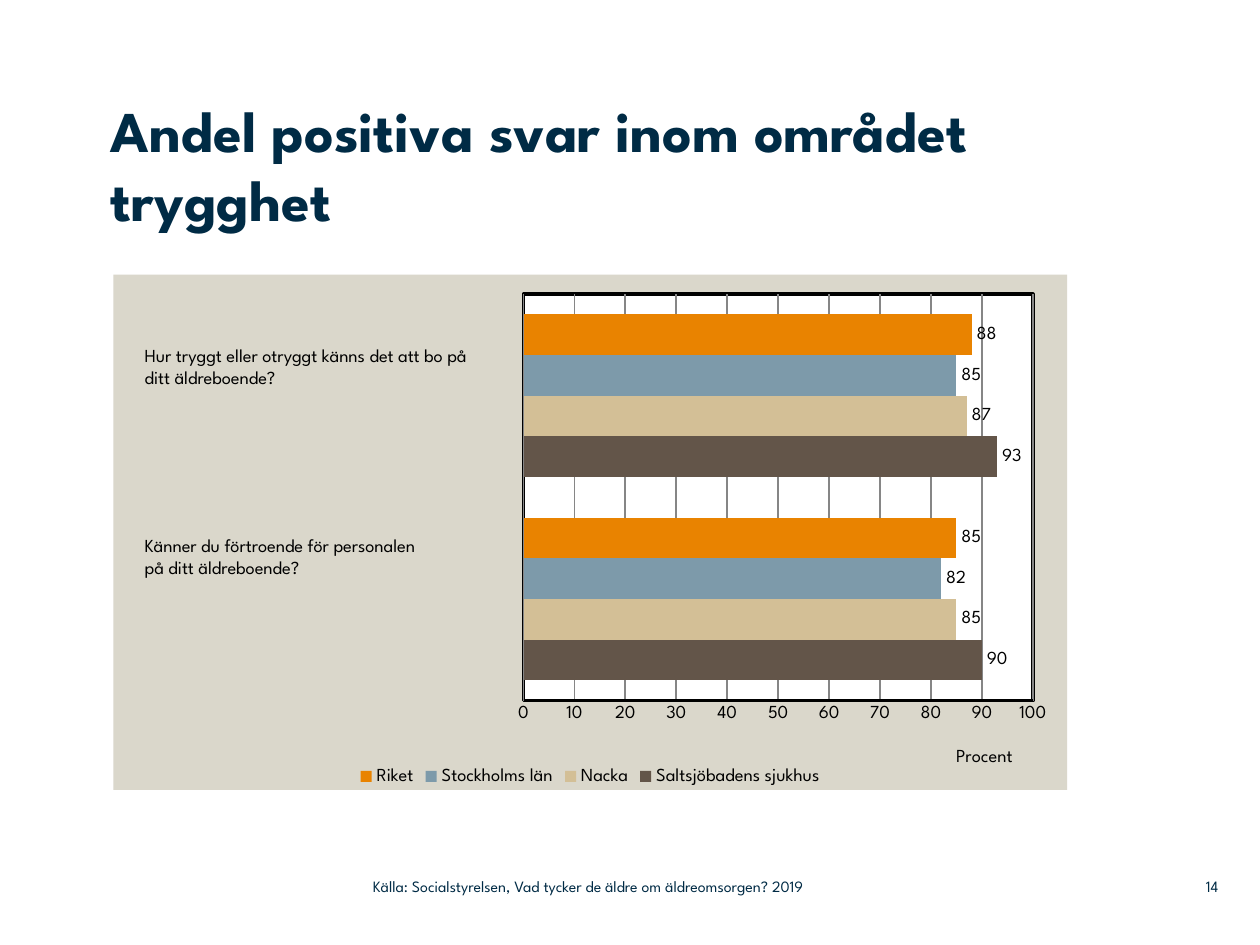
from dataclasses import dataclass

from pptx import Presentation
from pptx.chart.data import CategoryChartData
from pptx.dml.color import RGBColor
from pptx.enum.chart import XL_CHART_TYPE, XL_LABEL_POSITION, XL_LEGEND_POSITION, XL_TICK_MARK
from pptx.enum.text import MSO_ANCHOR, PP_ALIGN
from pptx.oxml import parse_xml
from pptx.oxml.ns import nsdecls, qn
from pptx.util import Inches, Pt


@dataclass(frozen=True)
class Theme:
    font: str = "League Spartan"
    navy: str = "002B45"
    black: str = "000000"
    grid: str = "868686"
    panel: str = "DAD7CB"
    plot: str = "FFFFFF"
    title: float = 33
    body: float = 10.5
    small: float = 9


THEME = Theme()
CATEGORIES = ["1", "2"]
SERIES = [
    ("Saltsjöbadens sjukhus", (90, 93), "635549"),
    ("Nacka", (85, 87), "D3BF96"),
    ("Stockholms län", (82, 85), "7D9AAA"),
    ("Riket", (85, 88), "E98300"),
]


def apply(obj, values):
    for name, value in values.items():
        setattr(obj, name, value)


def set_font(font, size, color, bold=False):
    apply(font, {"name": THEME.font, "size": Pt(size), "bold": bold})
    font.color.rgb = RGBColor.from_string(color)


def fill_text(sp, box, lines, size, color, bold=False, inset=True,
              anchor=MSO_ANCHOR.TOP, align=PP_ALIGN.LEFT):
    apply(sp, dict(zip(("left", "top", "width", "height"), map(Inches, box))))
    tf = sp.text_frame
    apply(tf, {"word_wrap": True, "vertical_anchor": anchor})
    if not inset:
        apply(tf, {f"margin_{side}": 0 for side in ("left", "top", "right", "bottom")})
    for i, line in enumerate(lines):
        p = tf.add_paragraph() if i else tf.paragraphs[0]
        p.alignment = align
        r = p.add_run()
        r.text = line
        set_font(r.font, size, color, bold)


def add_title(s, box, text):
    fill_text(s.shapes.title, box, [text], THEME.title, THEME.navy, bold=True, inset=False)


def add_text(s, box, lines, size, color, **options):
    sp = s.shapes.add_textbox(*map(Inches, box))
    fill_text(sp, box, lines, size, color, **options)


def set_layout(parent, index, **values):
    for old in parent.findall(qn("c:layout")):
        parent.remove(old)
    parts = "".join(f'<c:{name} val="{value}"/>' for name, value in values.items())
    parent.insert(index, parse_xml(
        f'<c:layout {nsdecls("c")}><c:manualLayout>{parts}</c:manualLayout></c:layout>'))


def area_format(fill, line):
    return parse_xml(
        f'<c:spPr {nsdecls("c", "a")}><a:solidFill><a:srgbClr val="{fill}"/></a:solidFill>'
        f'{line}</c:spPr>')


def format_value_axis(axis):
    apply(axis, {"minimum_scale": 0, "maximum_scale": 100, "major_unit": 10,
                 "has_major_gridlines": True, "major_tick_mark": XL_TICK_MARK.NONE,
                 "minor_tick_mark": XL_TICK_MARK.NONE})
    for line, color, width in ((axis.format.line, THEME.black, 2),
                               (axis.major_gridlines.format.line, THEME.grid, 1)):
        line.color.rgb = RGBColor.from_string(color)
        line.width = Pt(width)
    set_font(axis.tick_labels.font, THEME.body, THEME.black)
    title = axis.axis_title
    r = title.text_frame.paragraphs[0].add_run()
    r.text = "Procent"
    set_font(r.font, THEME.body, THEME.black)
    set_layout(title._element, 1, xMode="edge", yMode="edge", x=0.88, y=0.91)


def add_survey_chart(s, box):
    data = CategoryChartData()
    data.categories = CATEGORIES
    for name, values, _ in SERIES:
        data.add_series(name, values)
    chart = s.shapes.add_chart(XL_CHART_TYPE.BAR_CLUSTERED, *map(Inches, box), data).chart
    apply(chart, {"has_title": False, "has_legend": True})
    set_font(chart.font, THEME.body, THEME.black)
    apply(chart.legend, {"position": XL_LEGEND_POSITION.BOTTOM, "include_in_layout": False})
    set_font(chart.legend.font, THEME.body, THEME.black)
    chart.category_axis.visible = False
    format_value_axis(chart.value_axis)

    plot = chart.plots[0]
    apply(plot, {"gap_width": 100, "overlap": 0, "vary_by_categories": False})
    for series, (_, _, color) in zip(plot.series, SERIES):
        series.format.fill.solid()
        series.format.fill.fore_color.rgb = RGBColor.from_string(color)
        labels = series.data_labels
        apply(labels, {"show_value": True, "position": XL_LABEL_POSITION.OUTSIDE_END})
        set_font(labels.font, THEME.body, THEME.black)

    root = chart._chartSpace
    area = root.find(qn("c:chart")).find(qn("c:plotArea"))
    set_layout(area, 0, layoutTarget="inner", xMode="edge", yMode="edge",
               x=0.43, y=0.038, w=0.534, h=0.789)
    border = f'<a:ln w="{Pt(2)}"><a:solidFill><a:srgbClr val="{THEME.black}"/></a:solidFill></a:ln>'
    area.append(area_format(THEME.plot, border))
    root.find(qn("c:chart")).addnext(area_format(THEME.panel, "<a:ln><a:noFill/></a:ln>"))


def add_questions(s, box, pitch):
    left, top, width, height = box
    questions = (["Hur tryggt eller otryggt känns det att bo på ditt äldreboende?"],
                 ["Känner du förtroende för personalen", "på ditt äldreboende?"])
    for i, lines in enumerate(questions):
        add_text(s, (left, top + i * pitch, width, height), lines, THEME.body, THEME.black)


def add_footer(s, top, height):
    parts = ((9.2, 0.47, "14", PP_ALIGN.RIGHT),
             (2.96, 4.43, "Källa: Socialstyrelsen, Vad tycker de äldre om äldreomsorgen? 2019",
              PP_ALIGN.LEFT))
    for left, width, text, align in parts:
        add_text(s, (left, top, width, height), [text], THEME.small, THEME.navy,
                 inset=False, anchor=MSO_ANCHOR.MIDDLE, align=align)


def main():
    prs = Presentation()
    apply(prs, {"slide_width": Inches(10), "slide_height": Inches(7.5)})
    s = prs.slides.add_slide(prs.slide_layouts[5])
    add_survey_chart(s, (0.9, 2.18, 7.57, 4.09))
    add_title(s, (0.88, 0.75, 7.6, 1.42), "Andel positiva svar inom området trygghet")
    add_questions(s, (1.05, 2.68, 2.94, 0.45), 1.51)
    add_footer(s, 6.89, 0.29)
    prs.save("out.pptx")


if __name__ == "__main__":
    main()
